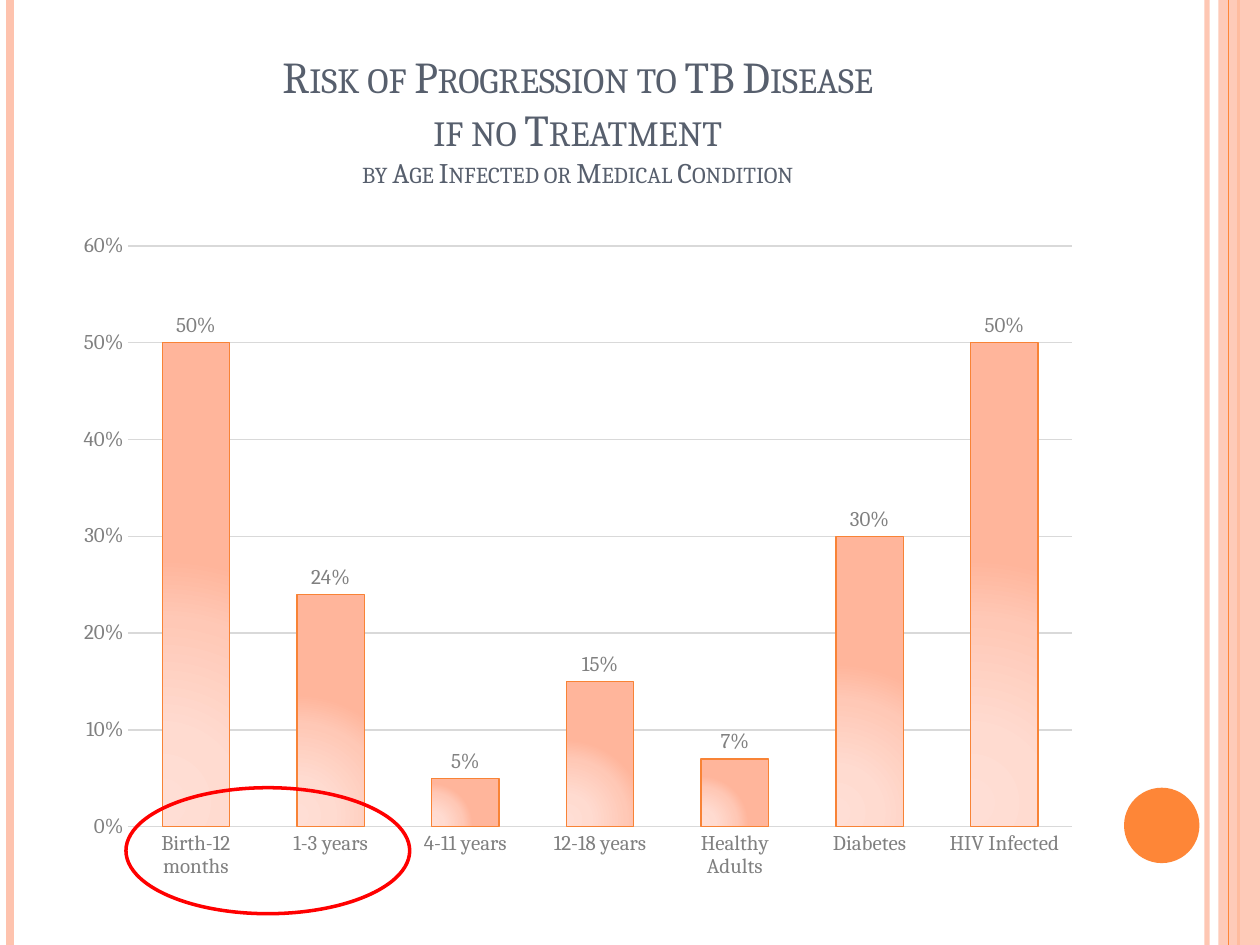
"""Build the slide on the risk of progression to TB disease."""
from lxml import etree
from pptx import Presentation
from pptx.chart.data import CategoryChartData
from pptx.dml.color import RGBColor
from pptx.enum.chart import XL_CHART_TYPE, XL_LABEL_POSITION, XL_TICK_MARK
from pptx.enum.shapes import MSO_CONNECTOR, MSO_SHAPE
from pptx.enum.text import MSO_ANCHOR, PP_ALIGN
from pptx.oxml import parse_xml
from pptx.oxml.ns import nsdecls, qn
from pptx.util import Cm, Pt

COLUMNS = XL_CHART_TYPE.COLUMN_CLUSTERED
OUTSIDE_END = XL_LABEL_POSITION.OUTSIDE_END
NO_TICK = XL_TICK_MARK.NONE
STRAIGHT = MSO_CONNECTOR.STRAIGHT
RECTANGLE, OVAL = MSO_SHAPE.RECTANGLE, MSO_SHAPE.OVAL
BOTTOM, CENTER = MSO_ANCHOR.BOTTOM, PP_ALIGN.CENTER

FONT = "Cambria"
PEACH, ORANGE, GREY = "FEC3AE", "FE8637", "D9D9D9"
HEIGHT = 19.05


def color(value):
    return RGBColor.from_string(value)


def set_alpha(element, percent):
    for fill in element.iter(qn("a:srgbClr")):
        etree.SubElement(fill, qn("a:alpha")).set("val", str(percent * 1000))


deck = Presentation()
deck.slide_width, deck.slide_height = Cm(25.4), Cm(HEIGHT)
page = deck.slides.add_slide(deck.slide_layouts[6])
shapes = page.shapes

stripes = [
    (24.33, PEACH, 3, 93),
    (0.2, PEACH, 4.5, 100),
    (24.97, ORANGE, 1.5, 100),
    (None, PEACH, 0, 87),
    (24.77, ORANGE, 0.75, 100),
]
for left, shade, width, alpha in stripes:
    if left is None:
        stripe = shapes.add_shape(RECTANGLE, Cm(24.56), 0, Cm(0.84), Cm(HEIGHT))
        stripe.shadow.inherit = False
        stripe.fill.solid()
        stripe.fill.fore_color.rgb = color(shade)
        stripe.line.fill.background()
    else:
        stripe = shapes.add_connector(STRAIGHT, Cm(left), 0, Cm(left), Cm(HEIGHT))
        stripe.line.color.rgb = color(shade)
        stripe.line.width = Pt(width)
        etree.SubElement(stripe._element.spPr, qn("a:effectLst"))
    if alpha < 100:
        set_alpha(stripe._element.spPr, alpha)

disc = shapes.add_shape(OVAL, Cm(22.66), Cm(15.88), Cm(1.52), Cm(1.52))
disc.shadow.inherit = False
disc.fill.solid()
disc.fill.fore_color.rgb = color(ORANGE)
disc.line.fill.background()

title = shapes.add_textbox(Cm(1.27), Cm(0.76), Cm(20.75), Cm(3.18))
frame = title.text_frame
frame.word_wrap = True
frame.vertical_anchor = BOTTOM
para = frame.paragraphs[0]
para.alignment = CENTER
title_lines = [
    ("Risk of Progression to TB Disease", 25.2),
    ("if no Treatment", 25.2),
    ("by Age Infected or Medical Condition", 16.2),
]
for number, (words, size) in enumerate(title_lines):
    if number:
        para.add_line_break()
    span = para.add_run()
    span.text = words
    span.font.color.rgb = color("575F6D")
    for name, value in {"name": FONT, "size": Pt(size)}.items():
        setattr(span.font, name, value)
    span._r.get_or_add_rPr().set("cap", "small")

risks = {
    "Birth-12 months": 0.5,
    "1-3 years": 0.24,
    "4-11 years": 0.05,
    "12-18 years": 0.15,
    "Healthy Adults": 0.07,
    "Diabetes": 0.3,
    "HIV Infected": 0.5,
}
data = CategoryChartData(number_format="0%")
data.categories = list(risks)
data.add_series("Series 1", list(risks.values()))
chart = shapes.add_chart(
    COLUMNS, Cm(1.27), Cm(4.45), Cm(20.75), Cm(13.54), data
).chart
chart.has_legend = False
chart.has_title = False
chart.font.name, chart.font.size = FONT, Pt(10)

plot = chart.plots[0]
plot_format = {"gap_width": 100, "overlap": -24, "vary_by_categories": False,
               "has_data_labels": True}
for name, value in plot_format.items():
    setattr(plot, name, value)
labels = plot.data_labels
label_format = {"show_value": True, "position": OUTSIDE_END,
                "number_format": "0%", "number_format_is_linked": False}
for name, value in label_format.items():
    setattr(labels, name, value)

category_axis, value_axis = chart.category_axis, chart.value_axis
axis_format = {"major_tick_mark": NO_TICK, "minor_tick_mark": NO_TICK}
for axis in (category_axis, value_axis):
    for name, value in axis_format.items():
        setattr(axis, name, value)
value_format = {"minimum_scale": 0, "maximum_scale": 0.6, "major_unit": 0.1,
                "has_major_gridlines": True}
for name, value in value_format.items():
    setattr(value_axis, name, value)
value_axis.tick_labels.number_format = "0%"
value_axis.tick_labels.number_format_is_linked = False
value_axis.format.line.fill.background()

for holder in (category_axis.tick_labels, value_axis.tick_labels, labels):
    holder.font.name, holder.font.size = FONT, Pt(12)
    holder.font.color.rgb = color("808080")

bars = plot.series[0]
outlines = [
    (category_axis.format.line, GREY),
    (value_axis.major_gridlines.format.line, GREY),
    (bars.format.line, "F88336"),
]
for line, shade in outlines:
    line.color.rgb = color(shade)
    line.width = Pt(0.75)

stops = {0: "FFDED5", 30: "FFDBD0", 75: "FFC8B6", 100: "FFB59B"}
stop_xml = "".join(
    f'<a:gs pos="{place * 1000}"><a:srgbClr val="{shade}"/></a:gs>'
    for place, shade in stops.items()
)
gradient = parse_xml(
    f'<a:gradFill {nsdecls("a")} rotWithShape="1"><a:gsLst>{stop_xml}</a:gsLst>'
    '<a:path path="circle"><a:fillToRect l="5000" t="100000" r="120000" b="10000"/>'
    "</a:path></a:gradFill>"
)
bars._element.get_or_add_spPr().insert(0, gradient)

ring = shapes.add_shape(OVAL, Cm(2.54), Cm(15.88), Cm(5.72), Cm(2.54))
ring.shadow.inherit = False
ring.fill.background()
ring.line.color.rgb = color("FF0000")
ring.line.width = Pt(2)

deck.save("out.pptx")
